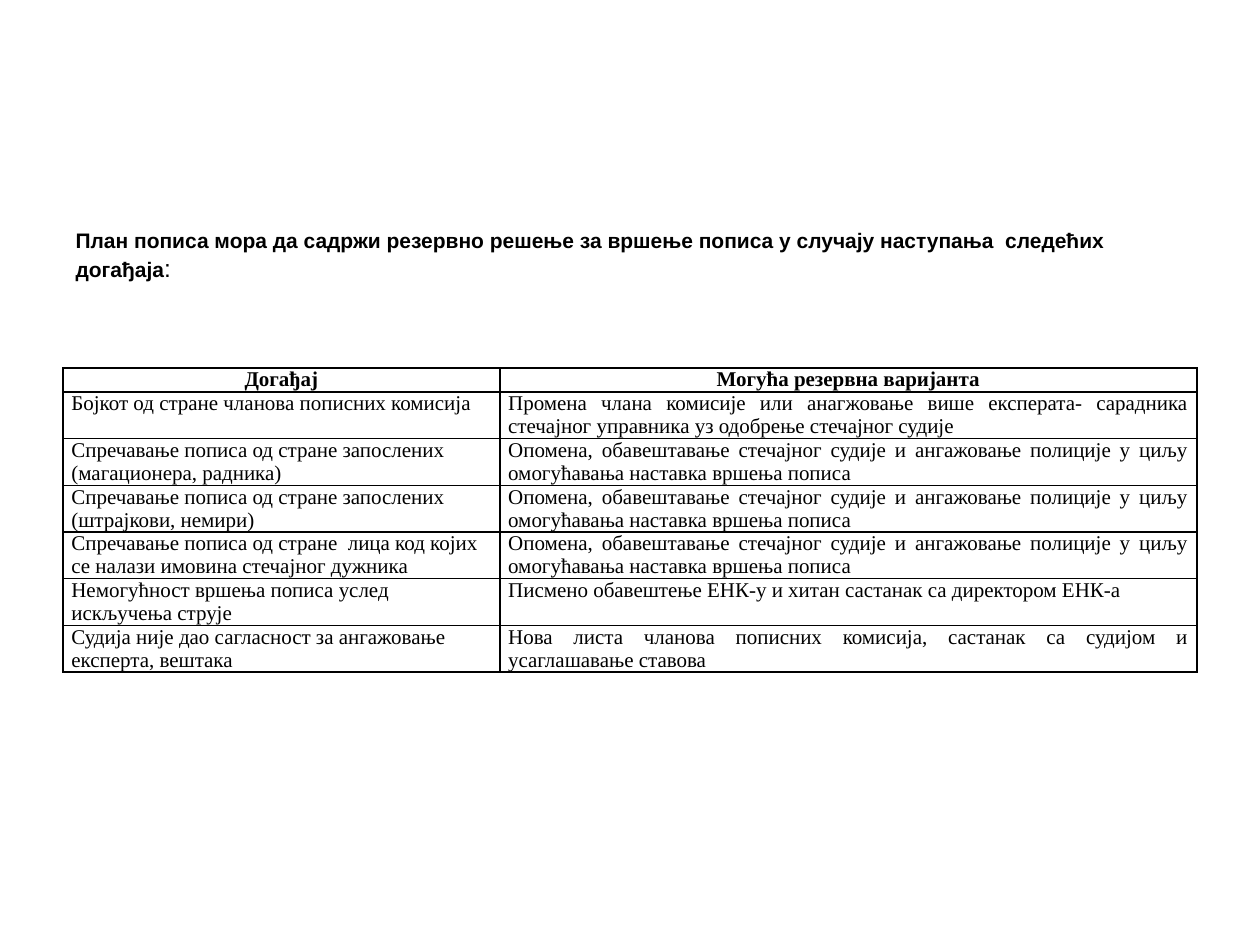
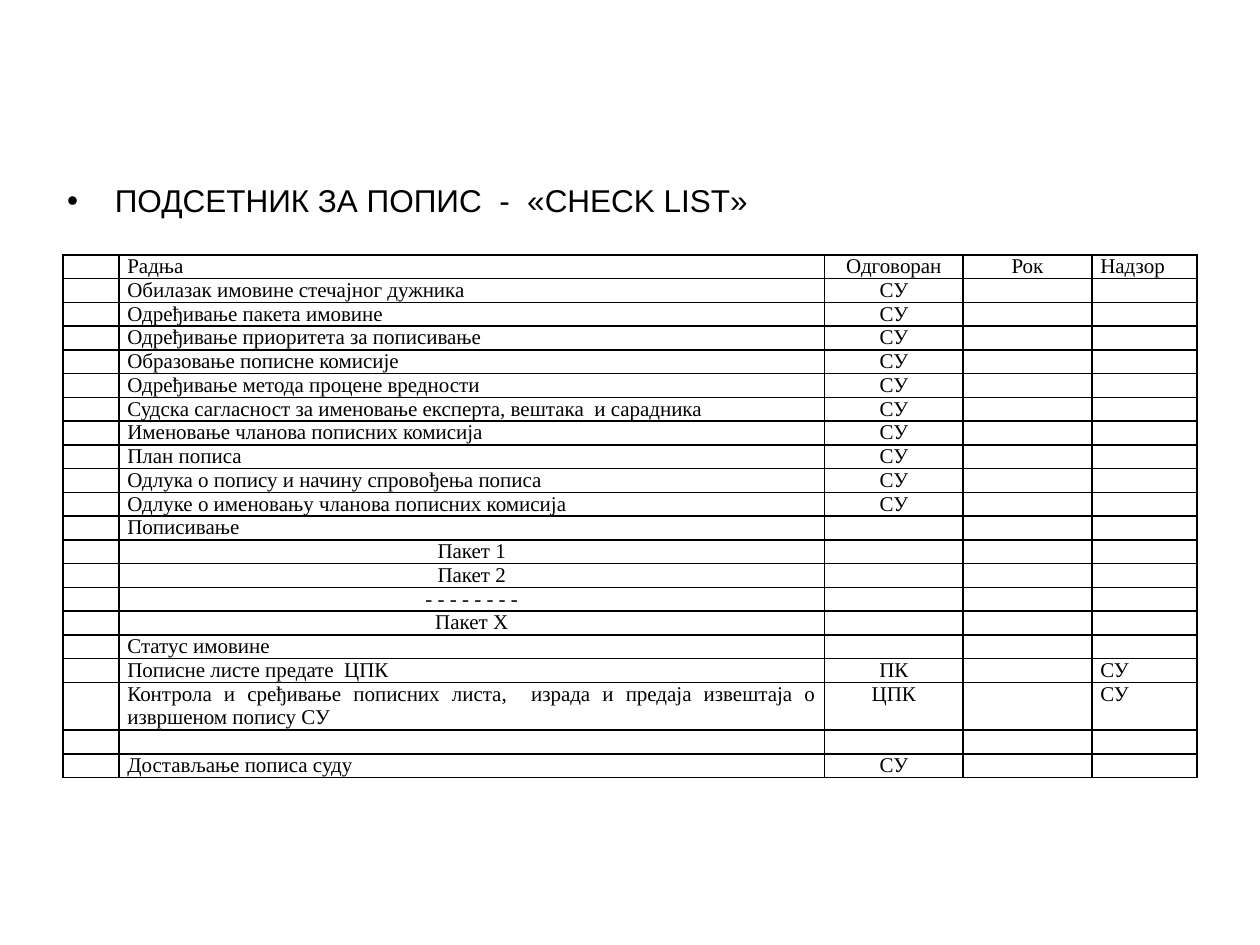
from lxml import etree
from pptx import Presentation
from pptx.dml.color import RGBColor
from pptx.enum.text import MSO_ANCHOR, MSO_AUTO_SIZE, PP_ALIGN
from pptx.oxml import parse_xml
from pptx.oxml.ns import nsdecls, qn
from pptx.util import Pt

PX = 10160  # 90 px to the inch
BLACK = "000000"
HEADING_FONT = "Arial"
TABLE_FONT = "Times New Roman"
TABLE_LEFT, TABLE_WIDTH = 45, 810
LINE_HEIGHT = 17
CELL_MARGIN = 6
LEFT, CENTER, JUSTIFY = PP_ALIGN.LEFT, PP_ALIGN.CENTER, PP_ALIGN.JUSTIFY


def write(para, text, font=TABLE_FONT, size=12, bold=False, color=BLACK):
    span = para.add_run()
    span.text = text
    span.font.name = font
    span.font.size = Pt(size)
    span.font.bold = bold
    span.font.color.rgb = RGBColor.from_string(color)


def add_borders(cell, color=BLACK, width=1):
    props = cell._tc.get_or_add_tcPr()
    for position, side in enumerate(("lnL", "lnR", "lnT", "lnB")):
        props.insert(position, parse_xml(
            f'<a:{side} {nsdecls("a")} w="{Pt(width)}"><a:solidFill>'
            f'<a:srgbClr val="{color}"/></a:solidFill></a:{side}>'))


# Slide 1: events and the fallback for each
police = ("Опомена, обавештавање стечајног судије и ангажовање полиције "
          "у циљу омогућавања наставка вршења пописа")
events = [
    ("Догађај", "Могућа резервна варијанта"),
    ("Бојкот од стране чланова пописних комисија",
     "Промена члана комисије или анагжовање више експерата- сарадника "
     "стечајног управника уз одобрење стечајног судије"),
    ("Спречавање пописа од стране запослених (магационера, радника)", police),
    ("Спречавање пописа од стране запослених (штрајкови, немири)", police),
    ("Спречавање пописа од стране  лица код којих се налази имовина "
     "стечајног дужника", police),
    ("Немогућност вршења пописа услед искључења струје",
     "Писмено обавештење ЕНК-у и хитан састанак са директором ЕНК-а"),
    ("Судија није дао сагласност за ангажовање експерта, вештака",
     "Нова листа чланова пописних комисија, састанак са судијом и "
     "усаглашавање ставова"),
]

# Slide 2: tasks with the person responsible, deadline and supervision
manager_tasks = [
    "Обилазак имовине стечајног дужника",
    "Одређивање пакета имовине",
    "Одређивање приоритета за пописивање",
    "Образовање пописне комисије",
    "Одређивање метода процене вредности",
    "Судска сагласност за именовање експерта, вештака  и сарадника",
    "Именовање чланова пописних комисија",
    "План пописа",
    "Одлука о попису и начину спровођења пописа",
    "Одлуке о именовању чланова пописних комисија",
]
packages = ["Пакет 1", "Пакет 2", "- - - - - - - -", "Пакет Х"]
long_task = ("Контрола и сређивање пописних листа,  израда и предаја "
             "извештаја о извршеном попису СУ")
checklist = [("", "Радња", "Одговоран", "Рок", "Надзор")]
checklist += [("", task, "СУ", "", "") for task in manager_tasks]
checklist += [("", task, "", "", "")
              for task in ["Пописивање", *packages, "Статус имовине"]]
checklist += [
    ("", "Пописне листе предате  ЦПК", "ПК", "", "СУ"),
    ("", long_task, "ЦПК", "", "СУ"),
    ("", "", "", "", ""),
    ("", "Достављање пописа суду", "СУ", "", ""),
]

pages = [
    {
        "heading": [
            ("План пописа мора да садржи резервно решење за вршење пописа "
             "у случају наступања  следећих догађаја", 12, True),
            (":", 14, False)],
        "body": (45, 158, 810, 445), "bullet": False,
        "rows": events, "top": 263, "columns": (312, 498),
        "aligns": (LEFT, JUSTIFY), "bold_header": True,
        "heights": [LINE_HEIGHT] + [2 * LINE_HEIGHT - 1] * 6,
    },
    {
        "heading": [("ПОДСЕТНИК ЗА ПОПИС  -  «CHECK LIST»", 18, False)],
        "body": (39, 125, 816, 478), "bullet": True,
        "rows": checklist, "top": 182, "columns": (40, 504, 99, 92, 75),
        "aligns": (LEFT, JUSTIFY, CENTER, CENTER, JUSTIFY),
        "bold_header": False,
        "heights": [LINE_HEIGHT * (2 if row[1] == long_task else 1)
                    for row in checklist],
    },
]

deck = Presentation()
deck.slide_width, deck.slide_height = 900 * PX, 675 * PX

for content in pages:
    page = deck.slides.add_slide(deck.slide_layouts[1])
    title = page.shapes.title
    title._element.getparent().remove(title._element)

    # Heading in the body placeholder
    body = page.placeholders[1]
    body.left, body.top, body.width, body.height = (
        length * PX for length in content["body"])
    body.text_frame.auto_size = MSO_AUTO_SIZE.NONE
    body.text_frame.vertical_anchor = MSO_ANCHOR.TOP
    para = body.text_frame.paragraphs[0]
    props = para._p.get_or_add_pPr()
    indent = 34 * PX if content["bullet"] else 0
    props.set("marL", str(indent))
    props.set("indent", str(-indent))
    if content["bullet"]:
        etree.SubElement(props, qn("a:buChar")).set("char", "•")
    else:
        etree.SubElement(props, qn("a:buNone"))
    para.space_before = Pt(0)
    for text, size, bold in content["heading"]:
        write(para, text, font=HEADING_FONT, size=size, bold=bold)

    # Table
    rows, heights = content["rows"], content["heights"]
    table = page.shapes.add_table(
        len(rows), len(content["columns"]), TABLE_LEFT * PX,
        content["top"] * PX, TABLE_WIDTH * PX, sum(heights) * PX).table
    table.first_row = table.horz_banding = False
    for column, width in zip(table.columns, content["columns"]):
        column.width = width * PX
    for line, height in zip(table.rows, heights):
        line.height = height * PX

    for row_index, row in enumerate(rows):
        bold = content["bold_header"] and row_index == 0
        for column_index, text in enumerate(row):
            cell = table.cell(row_index, column_index)
            cell.margin_left = cell.margin_right = CELL_MARGIN * PX
            cell.margin_top = cell.margin_bottom = 0
            cell.fill.background()
            add_borders(cell)
            para = cell.text_frame.paragraphs[0]
            centered = bold or text in packages
            para.alignment = CENTER if centered else content["aligns"][column_index]
            if text:
                write(para, text, bold=bold)
            else:
                # Keeps an empty cell as low as a line of text
                end = etree.SubElement(para._p, qn("a:endParaRPr"))
                end.set("sz", "1200")
                etree.SubElement(end, qn("a:latin")).set("typeface", TABLE_FONT)

deck.save("out.pptx")
